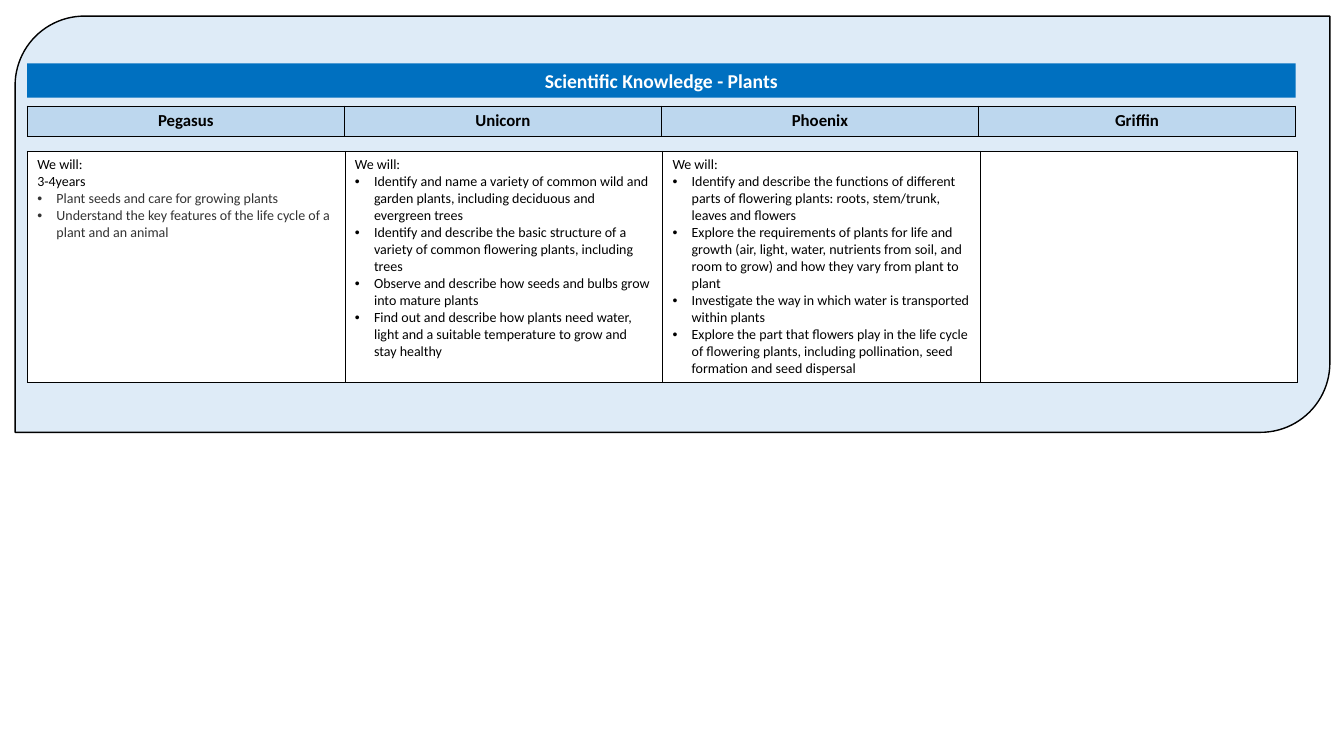
from lxml import etree
from pptx import Presentation
from pptx.dml.color import RGBColor
from pptx.enum.shapes import MSO_SHAPE
from pptx.enum.text import MSO_ANCHOR, MSO_AUTO_SIZE, PP_ALIGN
from pptx.oxml.ns import qn
from pptx.util import Inches, Pt

TITLE = "Scientific Knowledge - Plants"
CLASSES = [
    ("Pegasus", ["We will:", "3-4years"], [
        "Plant seeds and care for growing plants",
        "Understand the key features of the life cycle of a plant and an animal",
    ]),
    ("Unicorn", ["We will:"], [
        "Identify and name a variety of common wild and garden plants, including deciduous and evergreen trees",
        "Identify and describe the basic structure of a variety of common flowering plants, including trees",
        "Observe and describe how seeds and bulbs grow into mature plants",
        "Find out and describe how plants need water, light and a suitable temperature to grow and stay healthy",
    ]),
    ("Phoenix", ["We will:"], [
        "Identify and describe the functions of different parts of flowering plants: roots, stem/trunk, leaves and flowers",
        "Explore the requirements of plants for life and growth (air, light, water, nutrients from soil, and room to grow) and how they vary from plant to plant",
        "Investigate the way in which water is transported within plants",
        "Explore the part that flowers play in the life cycle of flowering plants, including pollination, seed formation and seed dispersal",
    ]),
    ("Griffin", [], []),
]

BLACK = RGBColor(0x00, 0x00, 0x00)
WHITE = RGBColor(0xFF, 0xFF, 0xFF)
GREY = RGBColor(0x33, 0x33, 0x33)
PANEL = RGBColor(0xDE, 0xEB, 0xF7)
HEADER = RGBColor(0xBD, 0xD7, 0xEE)
BANNER = RGBColor(0x00, 0x70, 0xC0)
BULLET_COLORS = {"Pegasus": GREY}
FONT = "Calibri"
CENTER, LEFT = PP_ALIGN.CENTER, PP_ALIGN.LEFT
MIDDLE = MSO_ANCHOR.MIDDLE

GRID_LEFT = 0.27
GRID_WIDTH = 12.58
BULLET_INDENT = Inches(0.19)


def add_text(p, text, size, color, bold=False, align=LEFT):
    p.alignment = align
    r = p.add_run()
    r.text = text
    r.font.name = FONT
    r.font.size = Pt(size)
    r.font.bold = bold
    r.font.color.rgb = color


def add_bullet(p):
    pPr = p._p.get_or_add_pPr()
    pPr.set("marL", str(BULLET_INDENT))
    pPr.set("indent", str(-BULLET_INDENT))
    etree.SubElement(pPr, qn("a:buFont"), typeface="Arial")
    etree.SubElement(pPr, qn("a:buChar"), char="•")


def add_borders(cell):
    tcPr = cell._tc.get_or_add_tcPr()
    for side in ("a:lnL", "a:lnR", "a:lnT", "a:lnB"):
        ln = etree.SubElement(tcPr, qn(side), w=str(Pt(0.5)))
        fill = etree.SubElement(ln, qn("a:solidFill"))
        etree.SubElement(fill, qn("a:srgbClr"), val=str(BLACK))


def add_row(s, top, width, height, color):
    box = [Inches(v) for v in (GRID_LEFT, top, width, height)]
    table = s.shapes.add_table(1, len(CLASSES), *box).table
    table.first_row = table.horz_banding = False
    for cell in table.iter_cells():
        add_borders(cell)
        cell.fill.solid()
        cell.fill.fore_color.rgb = color
    return table


prs = Presentation()
prs.slide_width, prs.slide_height = Inches(13.33), Inches(7.5)
s = prs.slides.add_slide(prs.slide_layouts[5])

panel = s.shapes.add_shape(MSO_SHAPE.ROUND_2_DIAG_RECTANGLE,
                           *[Inches(v) for v in (0.15, 0.16, 13.04, 4.13)])
panel.shadow.inherit = False
panel.fill.solid()
panel.fill.fore_color.rgb = PANEL
panel.line.color.rgb = BLACK
panel.line.width = Pt(1)

content = add_row(s, 1.5, 12.6, 2.28, WHITE)
headers = add_row(s, 1.05, GRID_WIDTH, 0.3, HEADER)
for col, (name, intro, aims) in enumerate(CLASSES):
    header = headers.cell(0, col)
    header.vertical_anchor = MIDDLE
    add_text(header.text_frame.paragraphs[0], name, 12, BLACK, True, CENTER)

    tf = content.cell(0, col).text_frame
    for i, text in enumerate(intro + aims):
        p = tf.add_paragraph() if i else tf.paragraphs[0]
        is_aim = i >= len(intro)
        if is_aim:
            add_bullet(p)
        add_text(p, text, 10, BULLET_COLORS.get(name, BLACK) if is_aim else BLACK)

title = s.shapes.title
s.shapes.element.append(title.element)
title.left, title.top = Inches(GRID_LEFT), Inches(0.63)
title.width, title.height = Inches(GRID_WIDTH), Inches(0.34)
title.fill.solid()
title.fill.fore_color.rgb = BANNER
tf = title.text_frame
tf.auto_size = MSO_AUTO_SIZE.NONE
tf.vertical_anchor = MIDDLE
add_text(tf.paragraphs[0], TITLE, 14, WHITE, True, CENTER)

prs.save("out.pptx")
